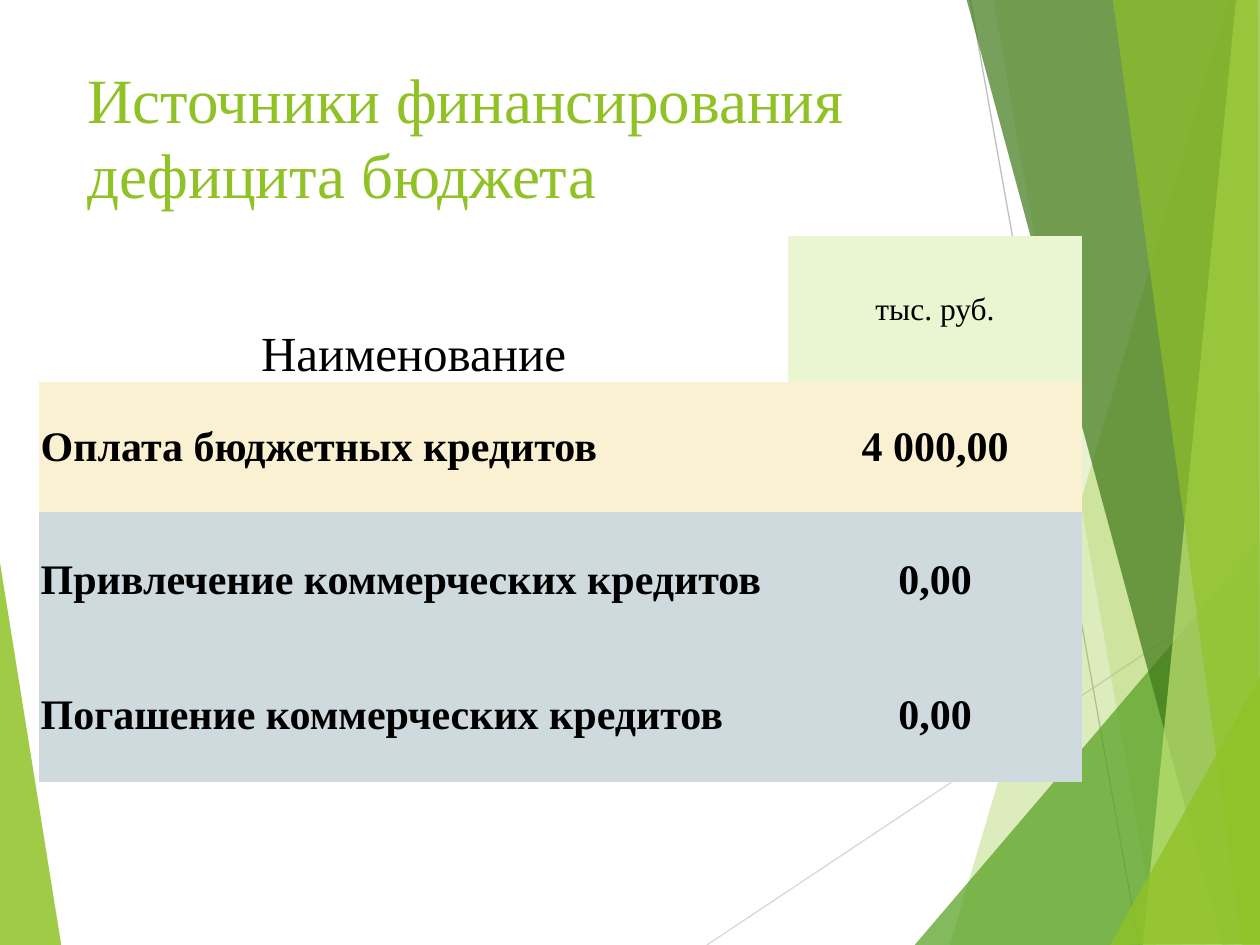
from pptx import Presentation
from pptx.dml.color import RGBColor
from pptx.enum.shapes import MSO_CONNECTOR
from pptx.enum.text import MSO_ANCHOR, PP_ALIGN
from pptx.oxml.ns import qn
from pptx.util import Cm, Pt
from lxml.etree import SubElement

FONT = "Times New Roman"
NO_STYLE = "{2D5ABB26-0587-4C30-8999-92F81FD0307C}"
COLORS = {
    "lime": "90C226", "green": "54A021", "dark": "3F7819", "pale": "C0E474",
    "line1": "D9D9D9", "line2": "BFBFBF", "text": "000000",
    "unit": "EAF6D1", "cream": "FAF1D2", "grey": "CFDADF",
}


def rgb(name):
    return RGBColor.from_string(COLORS[name])


def add_run(p, text, size, color, bold=False):
    r = p.add_run()
    r.text = text
    r.font.name = FONT
    r.font.size = Pt(size)
    r.font.bold = bold
    r.font.color.rgb = rgb(color)


prs = Presentation()
prs.slide_width, prs.slide_height = Cm(25.4), Cm(19.05)
s = prs.slides.add_slide(prs.slide_layouts[5])

# Thin background lines
for x1, y1, x2, y2, color in [
    (14.25, 19.05, 25.43, 11.61, "line1"),
    (19.56, 0, 22.96, 19.05, "line2"),
]:
    c = s.shapes.add_connector(MSO_CONNECTOR.STRAIGHT, Cm(x1), Cm(y1), Cm(x2), Cm(y2))
    c.line.color.rgb = rgb(color)
    c.line.width = Pt(0.75)
    SubElement(c.element.spPr, qn("a:effectLst"))

# Translucent facets: colour, opacity in percent, corners in cm
facets = [
    ("lime", 85, [(-0.03, 11.15), (1.24, 19.08), (-0.03, 19.05)]),
    ("lime", 30, [(24.77, 0), (19.15, 19.05), (25.45, 19.08), (25.43, 0.03)]),
    ("lime", 20, [(20.02, -0.03), (23.34, 19.05), (25.43, 19.05), (25.43, -0.03)]),
    ("green", 72, [(18.44, 19.05), (25.4, 10.9), (25.43, 19.05)]),
    ("dark", 70, [(19.48, -0.03), (24.64, 19.05), (25.43, 19.02), (25.43, -0.03)]),
    ("pale", 70, [(24.92, -0.03), (23.04, 19.05), (25.43, 19.05), (25.4, -0.03)]),
    ("lime", 65, [(22.43, -0.03), (25.04, 19.05), (25.4, 19.05), (25.35, -0.03)]),
    ("lime", 80, [(22.38, 19.05), (25.43, 13.59), (25.43, 19.02)]),
]
for color, opacity, corners in facets:
    pts = [(Cm(x), Cm(y)) for x, y in corners]
    fb = s.shapes.build_freeform(*pts[0])
    fb.add_line_segments(pts[1:], close=True)
    sp = fb.convert_to_shape()
    sp.shadow.inherit = False
    sp.line.fill.background()
    sp.fill.solid()
    sp.fill.fore_color.rgb = rgb(color)
    clr = next(sp.element.spPr.iter(qn("a:srgbClr")))
    SubElement(clr, qn("a:alpha"), val=str(opacity * 1000))

# Title
title = s.shapes.title
title.left, title.top, title.width, title.height = Cm(1.5), Cm(0.91), Cm(17.63), Cm(3.66)
tf = title.text_frame
tf.word_wrap = True
tf.vertical_anchor = MSO_ANCHOR.MIDDLE
p = tf.paragraphs[0]
p.alignment = PP_ALIGN.LEFT
add_run(p, "Источники финансирования дефицита бюджета", 36, "lime")

# Table: each cell is text, size, fill
rows = [
    (2.95, [("Наименование", 28, None), ("тыс. руб.", 18, "unit")]),
    (2.62, [("Оплата бюджетных кредитов", 24, "cream"), ("4 000,00", 24, "cream")]),
    (2.72, [("Привлечение коммерческих кредитов", 24, "grey"), ("0,00", 24, "grey")]),
    (2.72, [("Погашение коммерческих кредитов", 24, "grey"), ("0,00", 24, "grey")]),
]
frame = s.shapes.add_table(len(rows), 2, Cm(0.79), Cm(4.75), Cm(21.03), Cm(11.01))
next(frame.element.iter(qn("a:tableStyleId"))).text = NO_STYLE
table = frame.table
table.first_row = table.horz_banding = False
for col, width in zip(table.columns, (15.09, 5.94)):
    col.width = Cm(width)

for i, (height, cells) in enumerate(rows):
    table.rows[i].height = Cm(height)
    for j, (text, size, fill) in enumerate(cells):
        cell = table.cell(i, j)
        cell.margin_left = cell.margin_right = cell.margin_top = Cm(0.03)
        cell.margin_bottom = 0
        cell.vertical_anchor = MSO_ANCHOR.MIDDLE if fill else MSO_ANCHOR.BOTTOM
        if fill:
            cell.fill.solid()
            cell.fill.fore_color.rgb = rgb(fill)
        else:
            cell.fill.background()
        p = cell.text_frame.paragraphs[0]
        p.alignment = PP_ALIGN.LEFT if i and j == 0 else PP_ALIGN.CENTER
        add_run(p, text, size, "text", bold=i > 0)

prs.save("out.pptx")
